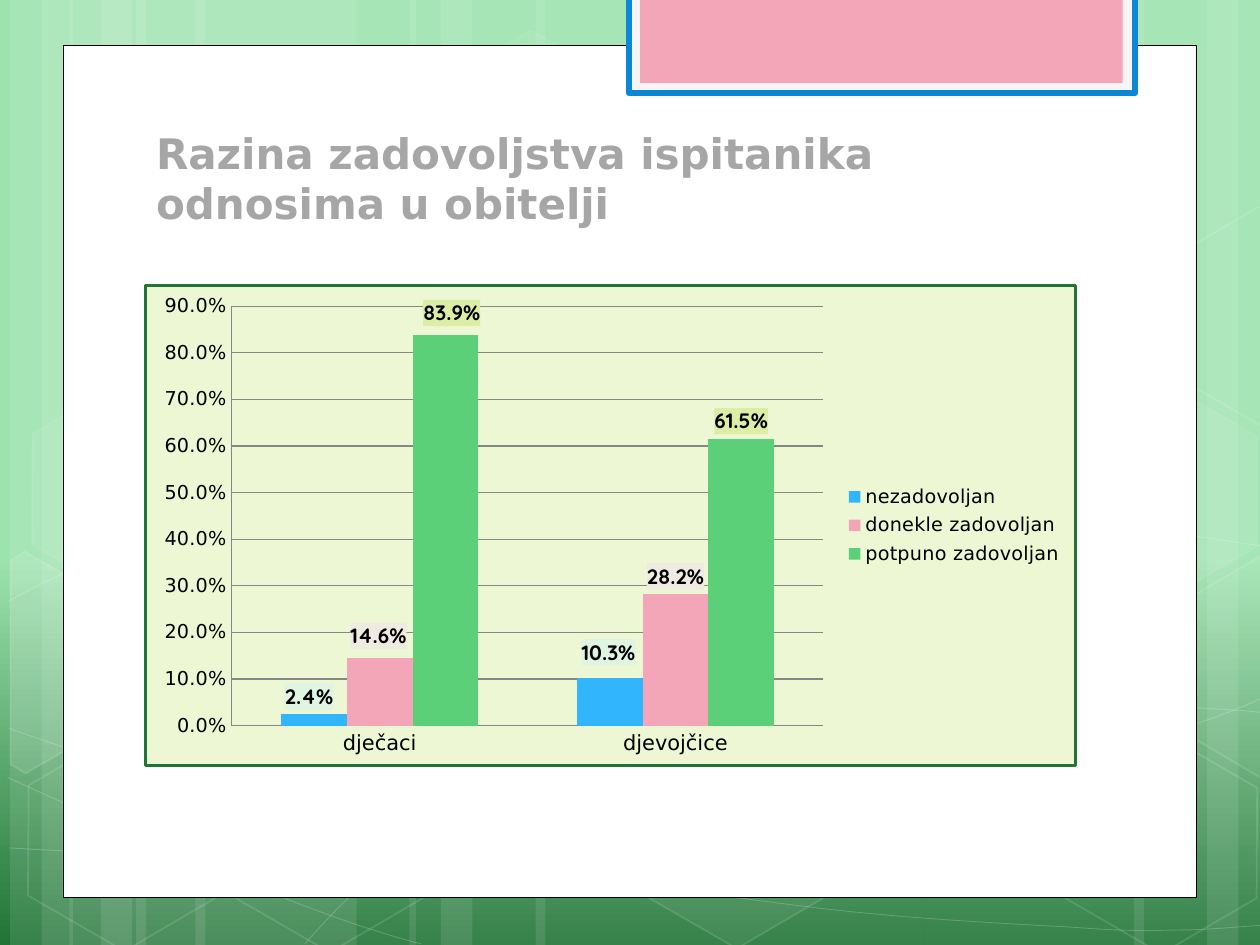
from copy import deepcopy
from dataclasses import dataclass
from math import cos, radians, sin
from typing import NamedTuple

from pptx import Presentation
from pptx.chart.chart import Chart
from pptx.chart.data import CategoryChartData
from pptx.dml.color import RGBColor
from pptx.enum.chart import XL_CHART_TYPE, XL_LABEL_POSITION, XL_LEGEND_POSITION, XL_TICK_MARK
from pptx.enum.shapes import MSO_SHAPE
from pptx.enum.text import MSO_ANCHOR
from pptx.oxml import parse_xml
from pptx.oxml.ns import nsdecls
from pptx.shapes.autoshape import Shape
from pptx.slide import Slide
from pptx.util import Pt

PX = 9144  # EMU per px, 100 px to the inch
TILT = 30
Point = tuple[float, float]


@dataclass(frozen=True)
class Theme:
    mint: str = "9DE3AE"
    forest: str = "217436"
    white: str = "FFFFFF"
    black: str = "000000"
    grey: str = "A6A6A6"
    grid: str = "868686"
    tab_rim: str = "F5F5F5"
    tab_line: str = "0B87D6"
    pink: str = "F4A6B9"
    chart_back: str = "EDF7D3"
    text_font: str = "DejaVu Sans"
    label_font: str = "Quicksand"
    title_size: int = 24
    category_size: int = 12
    value_size: int = 11
    label_size: int = 12


THEME = Theme()


class Box(NamedTuple):
    left: int
    top: int
    width: int
    height: int

    def emu(self) -> list[int]:
        return [value * PX for value in self]


@dataclass(frozen=True)
class Style:
    """Alphas are percentages; a missing colour means no fill or no line."""
    fill: str | None = None
    fill_alpha: int = 100
    line: str | None = None
    line_width: float = 1
    line_alpha: int = 100


def glass(fill_alpha: int, line_alpha: int) -> Style:
    return Style(THEME.white if fill_alpha else None, fill_alpha, THEME.white, 1, line_alpha)


class Hexagon(NamedTuple):
    left: int
    top: int
    style: Style


class CutHexagon(NamedTuple):
    center: Point
    points: list[Point]
    style: Style


class Series(NamedTuple):
    name: str
    values: tuple[float, float]
    color: str
    label_back: str
    nudges: tuple[Point, Point]


STRIPES = [Box(left, 0, width, 750) for left, width in (
    (108, 175), (8, 50), (33, 83), (155, 175), (55, 50), (80, 83),
    (733, 175), (958, 50), (900, 83), (425, 308), (325, 50), (350, 83))]

# Each curve: a start, then three points for every Bezier segment.
CURVES: list[list[Point]] = [
    [(7, 673), (61, 676), (115, 679), (190, 678), (265, 677), (358, 675), (458, 665),
     (558, 655), (700, 636), (792, 617), (883, 598), (977, 568), (1007, 551)],
    [(7, 477), (36, 461), (65, 446), (121, 431), (178, 416), (259, 394), (347, 387),
     (436, 380), (544, 379), (654, 387), (764, 395), (947, 426), (1007, 434)],
    [(6, 617), (127, 672), (247, 727), (334, 749)],
    [(7, 578), (38, 589), (70, 600), (128, 616), (186, 631), (273, 656), (357, 673),
     (440, 690), (545, 708), (628, 718), (711, 729), (800, 733), (853, 736),
     (905, 740), (919, 738), (945, 738), (971, 737), (989, 735), (1007, 734)],
    [(242, 749), (260, 729), (278, 709), (302, 691), (326, 673), (360, 653), (388, 639),
     (416, 625), (433, 619), (470, 609), (506, 599), (573, 585), (608, 578),
     (644, 571), (649, 571), (680, 569), (711, 566), (760, 563), (794, 562),
     (829, 561), (886, 562), (886, 562), (908, 562), (931, 562), (953, 562),
     (971, 563), (988, 564), (997, 565), (1006, 566), (1003, 565), (1006, 566)],
]
CURVE_STYLE = Style(line=THEME.white, line_width=0.5, line_alpha=20)

HEXAGONS = [
    Hexagon(334, 36, glass(4, 8)), Hexagon(497, 589, glass(6, 12)),
    Hexagon(11, 591, glass(0, 12)), Hexagon(14, 312, glass(7, 8)),
    Hexagon(174, 592, glass(0, 12)), Hexagon(753, 453, glass(10, 12)),
    Hexagon(834, 593, glass(0, 12)), Hexagon(834, 314, glass(7, 8))]
CUT_HEXAGONS = [
    CutHexagon((36, 535), [(8, 445), (19, 438), (96, 482), (95, 570), (20, 614), (8, 607)],
               glass(10, 12)),
    CutHexagon((985, 520), [(926, 485), (1001, 441), (1009, 446), (1009, 613), (1002, 617),
                            (926, 573)], glass(4, 12)),
    CutHexagon((985, 241), [(926, 207), (1001, 163), (1010, 168), (1009, 335), (1002, 339),
                            (926, 295)], glass(0, 12))]

PANELS = [
    (Box(50, 36, 900, 676), Style(THEME.white, line=THEME.black, line_width=0.5)),
    (Box(499, -2, 402, 76), Style(THEME.tab_rim, line=THEME.tab_line, line_width=3.35)),
    (Box(508, -2, 383, 68), Style(THEME.pink))]

CHART = Box(114, 225, 741, 384)
PLOT = Box(69, 17, 471, 335)  # within the chart
SERIES = [
    Series("nezadovoljan", (0.024, 0.103), "31B6FD", "DFF4E3", ((-4, 0), (-1, -6))),
    Series("donekle zadovoljan", (0.146, 0.282), THEME.pink, "EFEBE2", ((-1, -3), (0, 0))),
    Series("potpuno zadovoljan", (0.839, 0.615), "5BD078", "DCEDA6", ((5, -3), (0, 0)))]


def rgb(color: str) -> RGBColor:
    return RGBColor.from_string(color)


def apply_style(shape: Shape, style: Style) -> None:
    shape.shadow.inherit = False
    for part, color, alpha, where in (
            (shape.fill, style.fill, style.fill_alpha, "p:spPr"),
            (shape.line.fill, style.line, style.line_alpha, "p:spPr/a:ln")):
        if color is None:
            part.background()
            continue
        part.solid()
        part.fore_color.rgb = rgb(color)
        if alpha < 100:
            for node in shape.element.xpath(f"{where}/a:solidFill/a:srgbClr"):
                node.append(parse_xml(f'<a:alpha {nsdecls("a")} val="{alpha * 1000}"/>'))
    if style.line:
        shape.line.width = Pt(style.line_width)


def draw_box(page: Slide, box: Box, style: Style, kind: MSO_SHAPE = MSO_SHAPE.RECTANGLE) -> Shape:
    shape = page.shapes.add_shape(kind, *box.emu())
    apply_style(shape, style)
    return shape


def draw_hexagon(page: Slide, hexagon: Hexagon) -> None:
    box = Box(hexagon.left, hexagon.top, 175, 152)
    shape = draw_box(page, box, hexagon.style, MSO_SHAPE.HEXAGON)
    shape.adjustments[0], shape.adjustments[1] = 0.285, 1.155
    shape.rotation = TILT


def draw_outline(page: Slide, points: list[Point], style: Style, close: bool) -> Shape:
    start, *rest = points
    builder = page.shapes.build_freeform(*start, scale=PX)
    builder.add_line_segments(rest, close=close)
    shape = builder.convert_to_shape()
    apply_style(shape, style)
    return shape


def draw_curve(page: Slide, knots: list[Point]) -> None:
    """Draw the knots as an outline, then join each three lines into one Bezier segment."""
    shape = draw_outline(page, knots, CURVE_STYLE, close=False)
    lines = shape.element.xpath(".//a:lnTo")
    for first in range(0, len(lines), 3):
        segment = parse_xml(f'<a:cubicBezTo {nsdecls("a")}/>')
        lines[first].addprevious(segment)
        for line in lines[first:first + 3]:
            segment.append(line[0])
            line.getparent().remove(line)


def draw_cut_hexagon(page: Slide, hexagon: CutHexagon) -> None:
    """Turn the points back about the center, so that the tilt puts them in place."""
    (middle_x, middle_y), c, s = hexagon.center, cos(radians(TILT)), sin(radians(TILT))
    upright = [(middle_x + c * (x - middle_x) + s * (y - middle_y),
                middle_y - s * (x - middle_x) + c * (y - middle_y)) for x, y in hexagon.points]
    draw_outline(page, upright, hexagon.style, close=True).rotation = TILT


def draw_title(page: Slide, text: str) -> None:
    frame = page.shapes.add_textbox(*Box(114, 99, 768, 87).emu()).text_frame
    frame.word_wrap = True
    frame.vertical_anchor = MSO_ANCHOR.BOTTOM
    span = frame.paragraphs[0].add_run()
    span.text = text
    set_font(span.font, THEME.text_font, THEME.title_size, True, THEME.grey)


def set_font(font, name: str, size: int, bold: bool = False, color: str = THEME.black) -> None:
    font.name, font.size, font.bold = name, Pt(size), bold
    font.color.rgb = rgb(color)


def area_xml(fill: str, line: str = "") -> str:
    return (f'<c:spPr {nsdecls("c", "a")}><a:solidFill><a:srgbClr val="{fill}"/>'
            f'</a:solidFill>{line}</c:spPr>')


def layout_xml(**values: object) -> str:
    items = "".join(f'<c:{key} val="{value}"/>' for key, value in values.items())
    return f'<c:layout {nsdecls("c")}><c:manualLayout>{items}</c:manualLayout></c:layout>'


def add_labels(chart: Chart) -> None:
    for series in chart.plots[0].series:
        labels = series.data_labels
        labels.show_value = True
        labels.number_format, labels.number_format_is_linked = "0.0%", False
        labels.position = XL_LABEL_POSITION.OUTSIDE_END
        set_font(labels.font, THEME.label_font, THEME.label_size, True)
    for item, node in zip(SERIES, chart.element.xpath(".//c:ser/c:dLbls")):
        node.xpath("c:txPr")[0].addprevious(parse_xml(area_xml(item.label_back)))
        for leader in node.xpath("c:showLeaderLines"):
            leader.set("val", "0")
        shared = [part for part in node if not part.tag.endswith("showLeaderLines")]
        for index, (x, y) in enumerate(item.nudges):
            label = parse_xml(f'<c:dLbl {nsdecls("c")}><c:idx val="{index}"/></c:dLbl>')
            label.append(parse_xml(layout_xml(x=x / CHART.width, y=y / CHART.height)))
            label.extend(deepcopy(part) for part in shared)
            node.insert(index, label)


def draw_chart(page: Slide) -> None:
    data = CategoryChartData(number_format="0.0%")
    data.categories = ["dječaci", "djevojčice"]
    for item in SERIES:
        data.add_series(item.name, item.values)
    chart = page.shapes.add_chart(XL_CHART_TYPE.COLUMN_CLUSTERED, *CHART.emu(), data).chart
    set_font(chart.font, THEME.label_font, 10)
    chart.has_title = False
    chart.has_legend = True
    chart.legend.position = XL_LEGEND_POSITION.RIGHT
    chart.legend.include_in_layout = False
    set_font(chart.legend.font, THEME.text_font, THEME.value_size)

    plot = chart.plots[0]
    plot.gap_width, plot.overlap, plot.vary_by_categories = 150, 0, False
    for item, series in zip(SERIES, plot.series):
        series.format.fill.solid()
        series.format.fill.fore_color.rgb = rgb(item.color)
    for axis, size in ((chart.category_axis, THEME.category_size),
                       (chart.value_axis, THEME.value_size)):
        axis.major_tick_mark = axis.minor_tick_mark = XL_TICK_MARK.NONE
        axis.format.line.color.rgb = rgb(THEME.grid)
        set_font(axis.tick_labels.font, THEME.text_font, size)
    value_axis = chart.value_axis
    value_axis.minimum_scale, value_axis.maximum_scale, value_axis.major_unit = 0, 0.9, 0.1
    value_axis.tick_labels.number_format = "0.0%"
    value_axis.tick_labels.number_format_is_linked = False
    value_axis.major_gridlines.format.line.color.rgb = rgb(THEME.grid)
    add_labels(chart)

    area = chart.element.xpath("c:chart/c:plotArea")[0]
    for old in area.xpath("c:layout"):
        area.remove(old)
    area.insert(0, parse_xml(layout_xml(
        layoutTarget="inner", xMode="edge", yMode="edge",
        x=PLOT.left / CHART.width, y=PLOT.top / CHART.height,
        w=PLOT.width / CHART.width, h=PLOT.height / CHART.height)))
    border = (f'<a:ln w="{Pt(1.75)}"><a:solidFill><a:srgbClr val="{THEME.forest}"/>'
              '</a:solidFill></a:ln>')
    chart.element.xpath("c:chart")[0].addnext(parse_xml(area_xml(THEME.chart_back, border)))


def paint_background(page: Slide) -> None:
    fill = page.background.fill
    fill.gradient()
    fill.gradient_angle = 270
    for stop, color, position in zip(fill.gradient_stops, (THEME.mint, THEME.forest), (0.59, 1)):
        stop.color.rgb, stop.position = rgb(color), position


def main() -> None:
    deck = Presentation()
    deck.slide_width, deck.slide_height = 1000 * PX, 750 * PX
    page = deck.slides.add_slide(deck.slide_layouts[6])
    paint_background(page)
    for stripe in STRIPES:
        draw_box(page, stripe, Style(THEME.white, 10))
    for curve in CURVES:
        draw_curve(page, curve)
    for hexagon in HEXAGONS:
        draw_hexagon(page, hexagon)
    for cut_hexagon in CUT_HEXAGONS:
        draw_cut_hexagon(page, cut_hexagon)
    for box, style in PANELS:
        draw_box(page, box, style)
    draw_title(page, "Razina zadovoljstva ispitanika odnosima u obitelji")
    draw_chart(page)
    deck.save("out.pptx")


if __name__ == "__main__":
    main()
